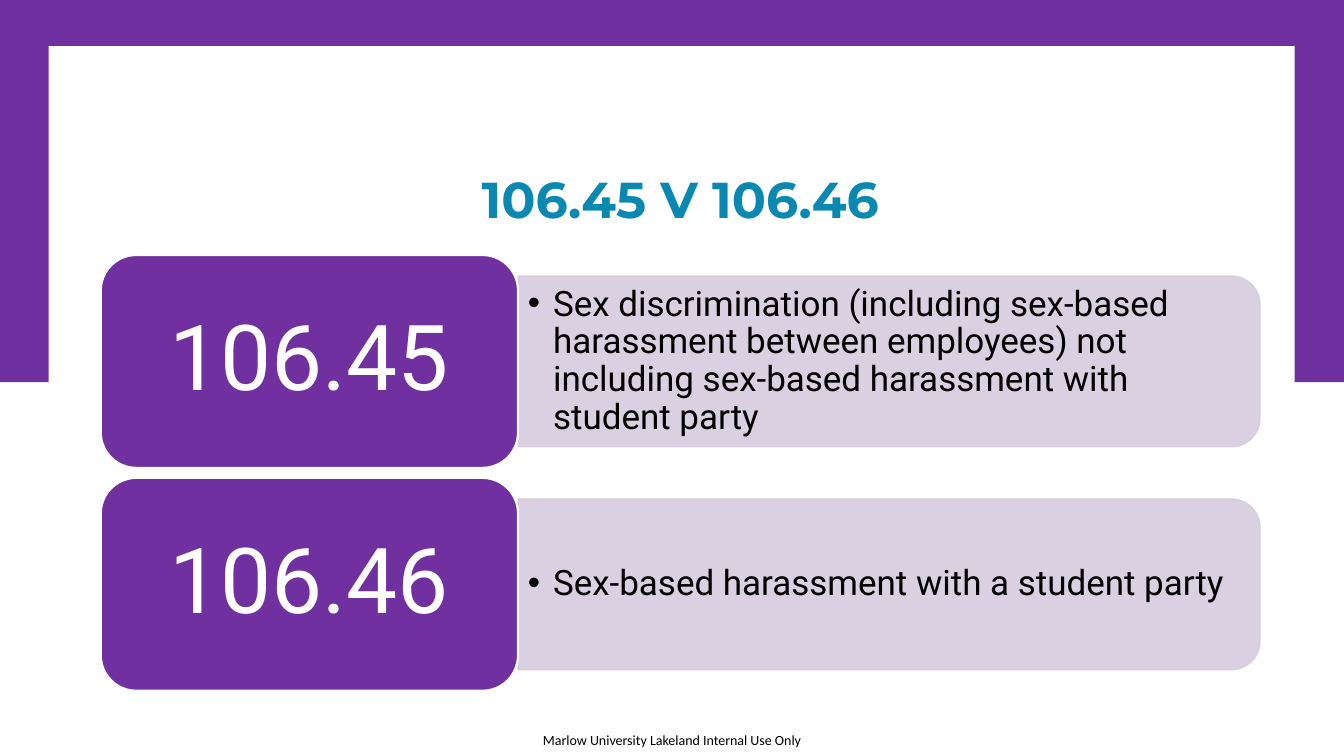
from lxml.etree import SubElement
from pptx import Presentation
from pptx.dml.color import RGBColor
from pptx.enum.shapes import MSO_SHAPE
from pptx.enum.text import MSO_ANCHOR, PP_ALIGN
from pptx.oxml.ns import qn
from pptx.util import Pt

COLORS = {
    "purple": "7030A0",
    "lilac": "D5CDDF",
    "teal": "0989B1",
    "white": "FFFFFF",
    "black": "000000",
}
RULES = [
    ("106.45", "Sex discrimination (including sex-based harassment between employees) "
               "not including sex-based harassment with student party"),
    ("106.46", "Sex-based harassment with a student party"),
]


def rgb(name):
    return RGBColor.from_string(COLORS[name])


def add_block(s, kind, box, fill, line=None, line_width=1):
    sp = s.shapes.add_shape(kind, *map(Pt, box))
    sp.shadow.inherit = False
    sp.fill.solid()
    sp.fill.fore_color.rgb = rgb(fill)
    if line:
        sp.line.color.rgb = rgb(line)
        sp.line.width = Pt(line_width)
    else:
        sp.line.fill.background()
    return sp


def set_text(sp, text, font, size, color, insets=(0, 0), align=PP_ALIGN.LEFT,
             anchor=MSO_ANCHOR.MIDDLE, bold=False):
    tf = sp.text_frame
    tf.word_wrap = True
    tf.vertical_anchor = anchor
    tf.margin_left = tf.margin_right = Pt(insets[0])
    tf.margin_top = tf.margin_bottom = Pt(insets[1])
    tf.text = text
    p = tf.paragraphs[0]
    p.alignment = align
    r = p.runs[0]
    r.font.name = font
    r.font.size = Pt(size)
    r.font.bold = bold
    r.font.color.rgb = rgb(color)
    return p


def add_frame(s, box):
    """Purple band around the top half, with the white page over it."""
    x, y, w, h = box
    add_block(s, MSO_SHAPE.RECTANGLE, (x - 2, y, w + 4, 272.9), "purple")
    add_block(s, MSO_SHAPE.RECTANGLE, (x + 34.7, y + 33, w - 70, h - 65.5), "white")


def add_title(s, box):
    sp = s.shapes.add_textbox(*map(Pt, box))
    set_text(sp, "106.45 V 106.46", "Montserrat", 36, "teal", (7.2, 0),
             PP_ALIGN.CENTER, MSO_ANCHOR.BOTTOM, True)


def add_footer(s, box):
    sp = s.shapes.add_textbox(*map(Pt, box))
    set_text(sp, "Marlow University Lakeland Internal Use Only", "Calibri", 10, "black",
             align=PP_ALIGN.CENTER, anchor=MSO_ANCHOR.TOP)


def add_rule(s, box, label, description):
    """Label tile on the left, lilac description panel on the right."""
    x, y, w, h = box
    label_w, panel_h = 298, 121.9
    panel_x, panel_w = x + label_w, w - label_w

    # Panel: turned a quarter so the rounded end faces right
    mid_x, mid_y = panel_x + panel_w / 2, y + h / 2
    panel = add_block(s, MSO_SHAPE.ROUND_2_SAME_RECTANGLE,
                      (mid_x - panel_h / 2, mid_y - panel_w / 2, panel_h, panel_w),
                      "lilac", "lilac")
    panel.rotation = 90
    for clr in panel._element.spPr.iter(qn("a:srgbClr")):
        SubElement(clr, qn("a:alpha"), val="90000")

    # Bulleted description
    sp = s.shapes.add_textbox(Pt(panel_x), Pt(mid_y - 55), Pt(panel_w - 6), Pt(110))
    p = set_text(sp, description, "Roboto", 25, "black", (7.2, 3.6))
    p.line_spacing = 0.9
    pPr = p._p.get_or_add_pPr()
    pPr.set("marL", str(Pt(18)))
    pPr.set("indent", str(Pt(-18)))
    SubElement(pPr, qn("a:buFont"), typeface="Arial")
    SubElement(pPr, qn("a:buChar"), char="•")

    # Label tile
    tile = add_block(s, MSO_SHAPE.ROUNDED_RECTANGLE, (x, y, label_w, h),
                     "purple", "white", 1.5)
    p = set_text(tile, label, "Roboto", 65, "white", (26, 17), PP_ALIGN.CENTER)
    p.line_spacing = 0.9


def main():
    prs = Presentation()
    prs.slide_width, prs.slide_height = Pt(960), Pt(540)
    s = prs.slides.add_slide(prs.slide_layouts[6])

    add_footer(s, (380, 522.7, 200, 12.3))
    add_frame(s, (0, 0, 960, 540))
    add_title(s, (72, 83.5, 828, 80))

    row_h, gap = 152, 7.2
    for i, (label, description) in enumerate(RULES):
        add_rule(s, (72, 182.2 + i * (row_h + gap), 828, row_h), label, description)

    prs.save("out.pptx")


if __name__ == "__main__":
    main()
